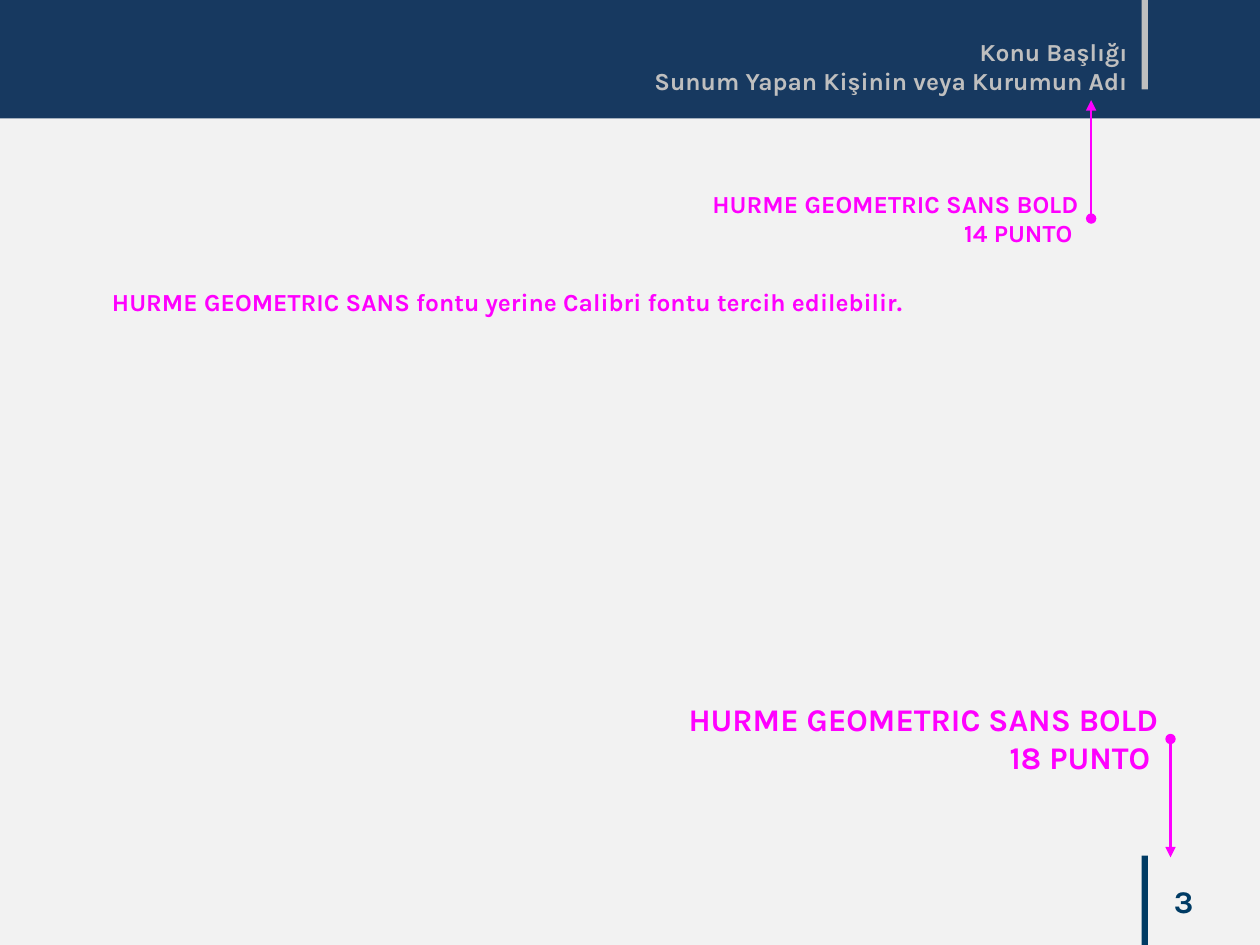
from lxml.etree import SubElement
from pptx import Presentation
from pptx.dml.color import RGBColor
from pptx.enum.shapes import MSO_CONNECTOR, MSO_SHAPE
from pptx.enum.text import MSO_ANCHOR as Anchor, MSO_AUTO_SIZE as AutoSize, PP_ALIGN as Align
from pptx.oxml.ns import qn
from pptx.util import Inches, Pt

PAPER = RGBColor(0xF2, 0xF2, 0xF2)
NAVY = RGBColor(0x17, 0x39, 0x60)
BLUE = RGBColor(0x00, 0x3B, 0x64)
GRAY = RGBColor(0xBF, 0xBF, 0xBF)
MAGENTA = RGBColor(0xFF, 0x00, 0xFF)
FONT = "Karla"

WIDTH, HEIGHT = 10, 7.5
BAR_LEFT, BAR_WIDTH, BAR_HEIGHT = 9.06, 0.05, 0.71
NOTE_WIDTH, ARROW_LENGTH = 5.51, 0.94

BLOCKS = [
    ((0, 0, WIDTH, 0.94), NAVY),
    ((BAR_LEFT, HEIGHT - BAR_HEIGHT, BAR_WIDTH, BAR_HEIGHT), BLUE),
    ((BAR_LEFT, 0, BAR_WIDTH, BAR_HEIGHT), GRAY),
]
TITLE = ["Konu Başlığı", "Sunum Yapan Kişinin veya Kurumun Adı"]
PAGE_NUMBER = ["3"]
FONT_ADVICE = ["HURME GEOMETRIC SANS fontu yerine Calibri fontu tercih edilebilir."]
FONT_NOTES = [
    {"lines": ["HURME GEOMETRIC SANS BOLD", "14 PUNTO "], "size": 14,
     "right": 8.66, "top": 1.45, "height": 0.57, "direction": -1},
    {"lines": ["HURME GEOMETRIC SANS BOLD", "18 PUNTO "], "size": 18,
     "right": 9.29, "top": 5.51, "height": 0.71, "direction": 1},
]


def add_block(slide, box, color):
    shape = slide.shapes.add_shape(MSO_SHAPE.RECTANGLE, *map(Inches, box))
    shape.shadow.inherit = False
    shape.fill.solid()
    shape.fill.fore_color.rgb = color
    shape.line.fill.background()


def write_lines(shape, lines, size, color, align=Align.RIGHT, anchor=Anchor.TOP):
    frame = shape.text_frame
    frame_format = {"word_wrap": True, "auto_size": AutoSize.NONE, "vertical_anchor": anchor}
    for name, value in frame_format.items():
        setattr(frame, name, value)
    frame.text = "\n".join(lines)
    for paragraph in frame.paragraphs:
        paragraph.alignment = align
        for name, value in {"name": FONT, "size": Pt(size), "bold": True}.items():
            setattr(paragraph.font, name, value)
        paragraph.font.color.rgb = color


def add_text(slide, box, *args, **kwargs):
    write_lines(slide.shapes.add_textbox(*map(Inches, box)), *args, **kwargs)


def add_arrow(slide, x, start, end):
    arrow = slide.shapes.add_connector(
        MSO_CONNECTOR.STRAIGHT, *map(Inches, (x, start, x, end)))
    arrow.line.color.rgb = MAGENTA
    arrow.line.width = Pt(1.5)
    properties = arrow.element.spPr
    line = properties.find(qn("a:ln"))
    for tag, kind in (("a:headEnd", "oval"), ("a:tailEnd", "triangle")):
        SubElement(line, qn(tag), type=kind)
    SubElement(properties, qn("a:effectLst"))


def add_font_note(slide, note):
    right, top, height = note["right"], note["top"], note["height"]
    add_text(slide, (right - NOTE_WIDTH, top, NOTE_WIDTH, height),
             note["lines"], note["size"], MAGENTA)
    middle = top + height / 2
    add_arrow(slide, right, middle, middle + note["direction"] * ARROW_LENGTH)


def place_title(slide):
    title = slide.shapes.title
    box = {"left": 3.54, "top": 0.24, "width": NOTE_WIDTH, "height": 0.88}
    for name, value in box.items():
        setattr(title, name, Inches(value))
    write_lines(title, TITLE, 14, GRAY)
    title.element.getparent().append(title.element)


def main():
    presentation = Presentation()
    presentation.slide_width = Inches(WIDTH)
    presentation.slide_height = Inches(HEIGHT)
    slide = presentation.slides.add_slide(presentation.slide_layouts[5])
    slide.background.fill.solid()
    slide.background.fill.fore_color.rgb = PAPER

    for box, color in BLOCKS:
        add_block(slide, box, color)
    add_text(slide, (7.32, 6.95, 2.25, 0.4), PAGE_NUMBER, 18, BLUE, anchor=Anchor.MIDDLE)
    for note in FONT_NOTES:
        add_font_note(slide, note)
    add_text(slide, (0.79, 2.23, 8.31, 0.34), FONT_ADVICE, 14, MAGENTA, align=Align.LEFT)
    place_title(slide)
    presentation.save("out.pptx")


if __name__ == "__main__":
    main()
